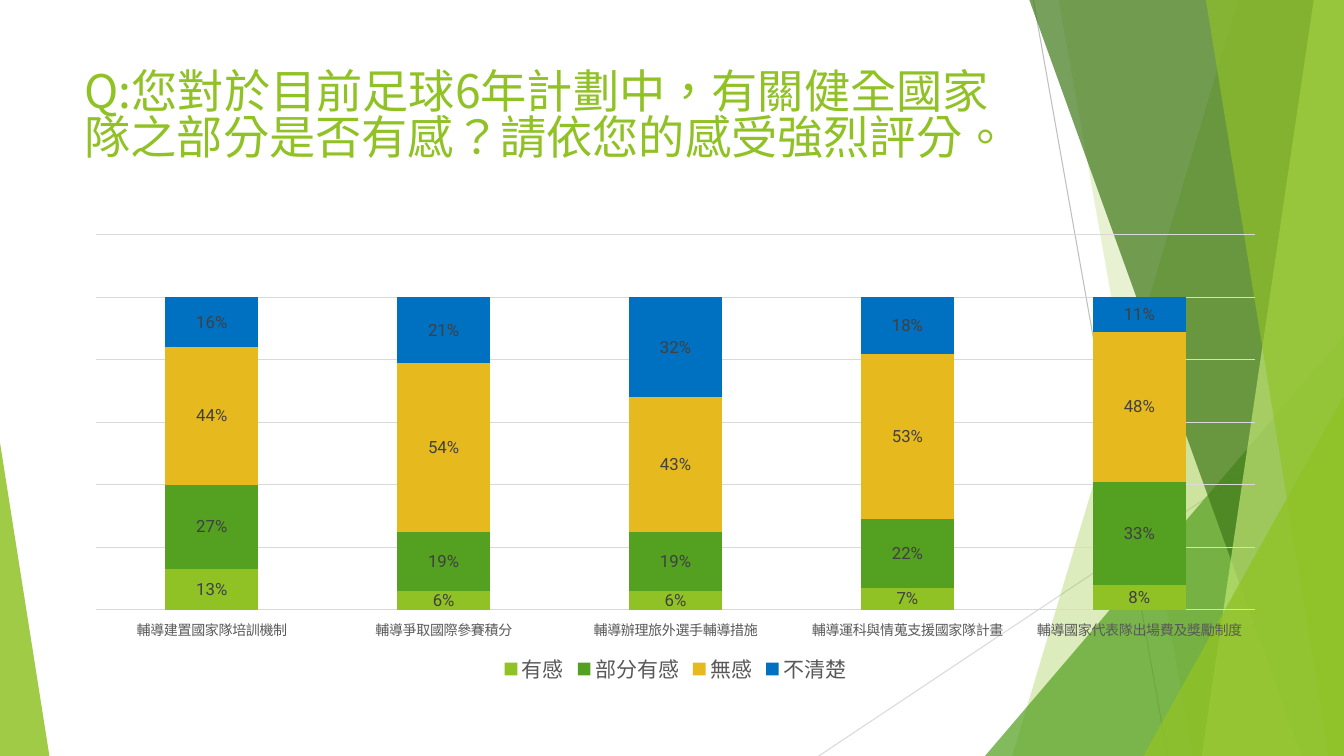
from lxml.etree import SubElement
from pptx import Presentation
from pptx.chart.data import CategoryChartData
from pptx.dml.color import RGBColor
from pptx.enum.chart import XL_CHART_TYPE as ChartType, XL_LABEL_POSITION as LabelPosition
from pptx.enum.chart import XL_LEGEND_POSITION as LegendPosition, XL_TICK_LABEL_POSITION as TickLabels
from pptx.enum.chart import XL_TICK_MARK as TickMark
from pptx.enum.shapes import MSO_CONNECTOR as Connector, MSO_SHAPE as Preset
from pptx.enum.text import MSO_ANCHOR as Anchor
from pptx.oxml.ns import qn
from pptx.util import Inches, Pt

WIDTH, HEIGHT = Inches(13.33), Inches(7.5)
CJK_FONT, LATIN_FONT = "Noto Sans CJK SC", "Roboto"
COLORS = {
    "lime": "90C226", "green": "54A021", "forest": "3F7819", "pale": "C0E474",
    "gold": "E6B91E", "blue": "0070C0", "label": "404040", "axis": "595959",
    "grid": "D9D9D9", "ray": "BFBFBF",
}
TITLE = "Q:您對於目前足球6年計劃中，有關健全國家隊之部分是否有感？請依您的感受強烈評分。"
MEASURES = ["輔導建置國家隊培訓機制", "輔導爭取國際參賽積分", "輔導辦理旅外選手輔導措施",
            "輔導運科與情蒐支援國家隊計畫", "輔導國家代表隊出場費及獎勵制度"]
RATINGS = [
    ("有感", "lime", [0.13, 0.06, 0.06, 0.07, 0.08]),
    ("部分有感", "green", [0.27, 0.19, 0.19, 0.22, 0.33]),
    ("無感", "gold", [0.44, 0.54, 0.43, 0.53, 0.48]),
    ("不清楚", "blue", [0.16, 0.21, 0.32, 0.18, 0.11]),
]


def color(name):
    """Return the named colour."""
    return RGBColor.from_string(COLORS[name])


def across(percent):
    """Turn a percentage of the slide width into a length."""
    return round(WIDTH * percent / 100)


def down(percent):
    """Turn a percentage of the slide height into a length."""
    return round(HEIGHT * percent / 100)


def box(left, top, width, height):
    """Turn four percentages into a position and a size."""
    return across(left), down(top), across(width), down(height)


def style_font(font, size, name, font_color):
    """Set the size, typeface and colour of a font."""
    font.size, font.name = Pt(size), name
    font.color.rgb = color(font_color)


def style_line(line, name):
    """Give a line the thin weight and a colour."""
    line.width = Pt(0.75)
    line.color.rgb = color(name)


def paint(shape, name, opacity):
    """Fill a shape with a translucent colour and no outline."""
    shape.shadow.inherit = False
    shape.line.fill.background()
    shape.fill.solid()
    shape.fill.fore_color.rgb = color(name)
    solid_color = shape.fill._xPr.find(qn("a:solidFill"))[0]
    SubElement(solid_color, qn("a:alpha")).set("val", str(opacity * 1000))


def add_ray(slide, start, end, name):
    """Draw a thin straight line between two points."""
    ray = slide.shapes.add_connector(
        Connector.STRAIGHT, across(start[0]), down(start[1]), across(end[0]), down(end[1]))
    style_line(ray.line, name)
    SubElement(ray._element.spPr, qn("a:effectLst"))


def add_band(slide, top_left, bottom_left, name, opacity):
    """Draw a full-height band from a slanted left side to the right edge."""
    builder = slide.shapes.build_freeform(across(top_left), 0)
    builder.add_line_segments([(WIDTH, 0), (WIDTH, HEIGHT), (across(bottom_left), HEIGHT)])
    paint(builder.convert_to_shape(), name, opacity)


def add_corner(slide, left, top, width, apex, name, opacity):
    """Draw a right triangle standing on the bottom edge."""
    triangle = slide.shapes.add_shape(
        Preset.ISOSCELES_TRIANGLE, *box(left, top, width, 100 - top))
    triangle.adjustments[0] = apex
    paint(triangle, name, opacity)


def add_backdrop(slide):
    """Draw the facets behind the content."""
    add_ray(slide, (76.89, 0), (86.87, 100), "ray")
    add_ray(slide, (100, 53.73), (60.92, 100), "grid")
    add_band(slide, 92.12, 75.32, "lime", 30)
    add_band(slide, 78.77, 88.75, "lime", 20)
    add_corner(slide, 73.29, 44.4, 26.71, 1, "green", 72)
    add_band(slide, 76.59, 96.85, "forest", 70)
    add_band(slide, 97.75, 89.42, "pale", 70)
    add_band(slide, 89.72, 98.87, "lime", 65)
    add_corner(slide, 85.07, 52.4, 14.93, 1, "lime", 80)
    add_corner(slide, 0, 58.53, 3.68, 0, "lime", 85)


def add_title(slide):
    """Write the survey question."""
    frame = slide.shapes.add_textbox(*box(5.55, 8.93, 70.52, 19.2)).text_frame
    frame.word_wrap = True
    frame.vertical_anchor = Anchor.TOP
    paragraph = frame.paragraphs[0]
    paragraph.line_spacing = 0.82
    run = paragraph.add_run()
    run.text = TITLE
    style_font(run.font, 33, CJK_FONT, "lime")
    properties = run._r.get_or_add_rPr()
    properties.set("lang", "zh-TW")
    SubElement(properties, qn("a:ea")).set("typeface", CJK_FONT)


def style_axes(chart):
    """Show the category axis and keep only the grid of the value axis."""
    categories, values = chart.category_axis, chart.value_axis
    categories.major_tick_mark = categories.minor_tick_mark = TickMark.NONE
    categories.tick_label_position = TickLabels.LOW
    style_font(categories.tick_labels.font, 10, LATIN_FONT, "axis")
    style_line(categories.format.line, "grid")
    values.minimum_scale, values.maximum_scale, values.major_unit = 0, 1.2, 0.2
    values.has_major_gridlines = True
    style_line(values.major_gridlines.format.line, "grid")
    values.tick_labels.number_format = "0%"
    values.tick_labels.number_format_is_linked = False
    values.visible = False


def style_series(series, name):
    """Colour one rating and label its segments."""
    series.format.fill.solid()
    series.format.fill.fore_color.rgb = color(name)
    labels = series.data_labels
    labels.show_value = True
    labels.position = LabelPosition.CENTER
    labels.number_format, labels.number_format_is_linked = "0%", False
    style_font(labels.font, 12, LATIN_FONT, "label")


def place_plot(chart, **shares):
    """Fix the inner plot area as shares of the chart."""
    plot_area = chart._chartSpace.chart.plotArea
    for old in plot_area.findall(qn("c:layout")):
        plot_area.remove(old)
    layout = SubElement(plot_area, qn("c:layout"))
    plot_area.insert(0, layout)
    manual = SubElement(layout, qn("c:manualLayout"))
    settings = {"layoutTarget": "inner", "xMode": "edge", "yMode": "edge", **shares}
    for tag, value in settings.items():
        SubElement(manual, qn(f"c:{tag}")).set("val", str(value))


def add_ratings_chart(slide):
    """Add the stacked columns of answers for each measure."""
    data = CategoryChartData(number_format="0%")
    data.categories = MEASURES
    for name, _, shares in RATINGS:
        data.add_series(name, shares)
    chart = slide.shapes.add_chart(
        ChartType.COLUMN_STACKED, *box(5.33, 29.87, 89.87, 61.2), data).chart
    chart.has_title = False
    style_font(chart.font, 10, LATIN_FONT, "axis")
    plot = chart.plots[0]
    plot.gap_width, plot.overlap, plot.vary_by_categories = 150, 100, False
    for series, (_, name, _) in zip(plot.series, RATINGS):
        style_series(series, name)
    style_axes(chart)
    place_plot(chart, x=0.02, y=0.02, w=0.96, h=0.81)
    chart.has_legend = True
    chart.legend.position = LegendPosition.BOTTOM
    chart.legend.include_in_layout = False
    style_font(chart.legend.font, 15, CJK_FONT, "axis")


def main():
    """Build and save the slide."""
    presentation = Presentation()
    presentation.slide_width, presentation.slide_height = WIDTH, HEIGHT
    slide = presentation.slides.add_slide(presentation.slide_layouts[6])
    add_backdrop(slide)
    add_title(slide)
    add_ratings_chart(slide)
    presentation.save("out.pptx")


if __name__ == "__main__":
    main()
